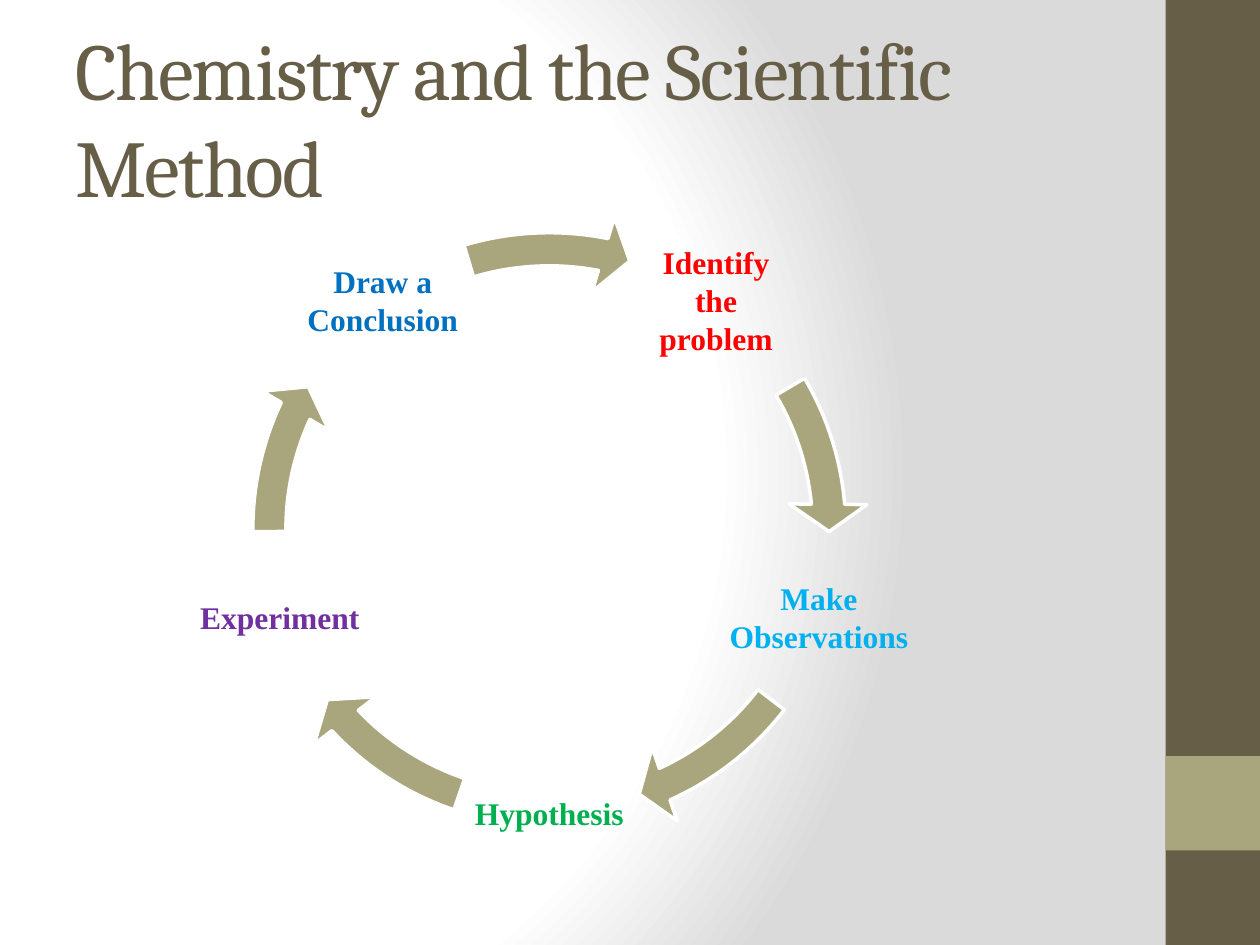
from dataclasses import dataclass
from math import cos, radians, sin

from pptx import Presentation
from pptx.dml.color import RGBColor
from pptx.enum import shapes, text
from pptx.oxml import parse_xml
from pptx.oxml.ns import nsdecls
from pptx.util import Inches, Pt


@dataclass(frozen=True)
class Theme:
    dark: str = "675E47"
    accent: str = "A9A57C"
    white: str = "FFFFFF"
    edge: str = "DADADA"
    title_font: str = "Cambria"
    label_font: str = "Times New Roman"
    title_size: int = 46
    label_size: int = 18
    arrow_line: int = 2


THEME = Theme()

# Lines, colour, box width, then start and end angle of the arrow that follows
STEPS = [
    (["Identify", "the", "problem"], "FF0000", 1.35, 329.42, 354.9),
    (["Make", "Observations"], "00B0F0", 1.57, 37.54, 65.65),
    (["Hypothesis"], "00B050", 1.44, 108.76, 136.86),
    (["Experiment"], "7030A0", 1.35, 179.5, 204.98),
    (["Draw a", "Conclusion"], "0070C0", 1.35, 253.29, 281.11),
]


def set_all(target, values):
    for name, value in values.items():
        setattr(target, name, value)


def add_shape(slide, kind, box, color):
    shape = slide.shapes.add_shape(kind, *map(Inches, box))
    shape.shadow.inherit = False
    shape.fill.solid()
    shape.fill.fore_color.rgb = RGBColor.from_string(color)
    shape.line.fill.background()
    return shape


def add_text(slide, box, lines, color, font, frame):
    text_frame = slide.shapes.add_textbox(*map(Inches, box)).text_frame
    set_all(text_frame, {"word_wrap": True,
                         "vertical_anchor": text.MSO_ANCHOR.MIDDLE, **frame})
    text_frame.text = "\n".join(lines)
    for paragraph in text_frame.paragraphs:
        run = paragraph.runs[0]
        set_all(run.font, font)
        run.font.color.rgb = RGBColor.from_string(color)
    return text_frame


def add_background(slide):
    stops = "".join(
        f'<a:gs pos="{pos * 1000}"><a:srgbClr val="{color}"/></a:gs>'
        for pos, color in [(0, THEME.white), (75, THEME.white), (100, THEME.edge)])
    background = parse_xml(
        f'<p:bg {nsdecls("p", "a")}><p:bgPr><a:gradFill rotWithShape="1">'
        f'<a:gsLst>{stops}</a:gsLst><a:path path="circle">'
        '<a:fillToRect l="20000" t="50000" r="100000" b="50000"/></a:path>'
        '</a:gradFill><a:effectLst/></p:bgPr></p:bg>')
    slide.element.cSld.insert(0, background)


def add_side_band(slide, left, top, width, height):
    rectangle = shapes.MSO_SHAPE.RECTANGLE
    add_shape(slide, rectangle, (left, top, width, height), THEME.dark)
    add_shape(slide, rectangle, (left, top + 0.8 * height, width, width), THEME.accent)


def add_title(slide, *box):
    font = {"name": THEME.title_font, "size": Pt(THEME.title_size)}
    title = add_text(slide, box, ["Chemistry and the Scientific Method"],
                     THEME.dark, font, {})
    title.paragraphs[0].runs[0].font._element.set("spc", "-100")


def add_cycle(slide, left, top, size):
    center_x, center_y = left + size / 2, top + size / 2
    radius, label_height = 2.25, 1.35
    font = {"name": THEME.label_font, "size": Pt(THEME.label_size), "bold": True}
    frame = {f"margin_{side}": Inches(0.03)
             for side in ("left", "top", "right", "bottom")}

    for index, (lines, color, width, start, end) in enumerate(STEPS):
        # Step label, evenly spaced clockwise from the upper right
        angle = radians(-54 + index * 360 / len(STEPS))
        box = (center_x + radius * cos(angle) - width / 2,
               center_y + radius * sin(angle) - label_height / 2,
               width, label_height)
        label = add_text(slide, box, lines, color, font, frame)
        for paragraph in label.paragraphs:
            paragraph.alignment = text.PP_ALIGN.CENTER

        # Arrow to the next step; 0.6 turns degrees into adjustment units
        arrow = add_shape(slide, shapes.MSO_SHAPE.CIRCULAR_ARROW,
                          (left, top, size, size), THEME.accent)
        arrow.line.color.rgb = RGBColor.from_string(THEME.white)
        arrow.line.width = Pt(THEME.arrow_line)
        settings = (0.052, 5.6 * 0.6, end * 0.6, start * 0.6, 0.061)
        for position, value in enumerate(settings):
            arrow.adjustments[position] = value


def main():
    deck = Presentation()
    deck.slide_width, deck.slide_height = Inches(10), Inches(7.5)
    slide = deck.slides.add_slide(deck.slide_layouts[6])
    add_background(slide)
    add_side_band(slide, 9.25, 0, 0.75, 7.5)
    add_title(slide, 0.5, 0.3, 8.33, 1.25)
    add_cycle(slide, 1.83, 1.67, 5.06)
    deck.save("out.pptx")


if __name__ == "__main__":
    main()
